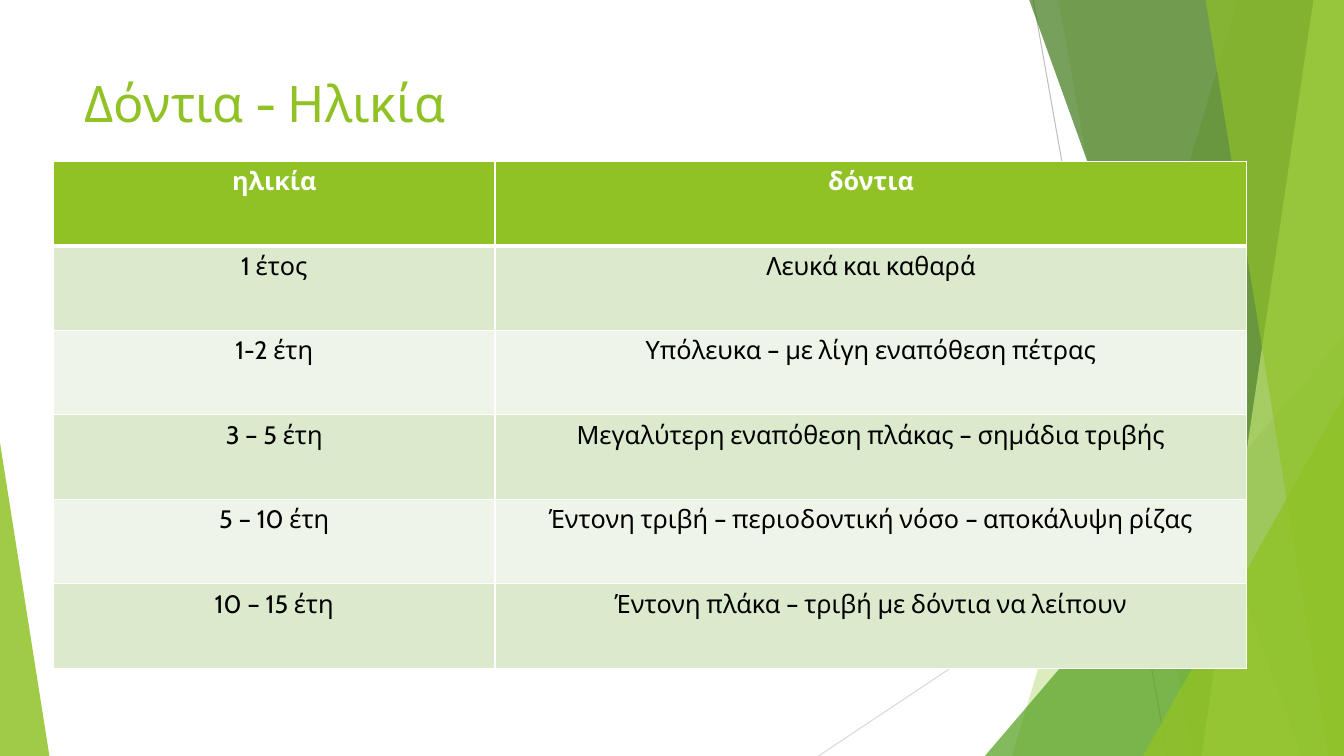
"""Build a slide with a table of teeth condition by age on a faceted green background."""
from lxml.etree import SubElement
from pptx import Presentation
from pptx.dml.color import RGBColor
from pptx.enum.shapes import MSO_CONNECTOR as CONNECTOR, MSO_SHAPE as SHAPE
from pptx.enum.text import MSO_ANCHOR as ANCHOR, PP_ALIGN as ALIGN
from pptx.oxml.ns import qn
from pptx.util import Inches, Pt

WIDTH, HEIGHT = Inches(13.333), Inches(7.5)
FONT = "Cabin"
GREEN, DARK_GREEN, MID_GREEN, LIME = "90C226", "3F7819", "54A021", "C0E474"
BANDS = ("EEF4E8", "DBE9CD")
COLUMN_SHARES = (32.85, 55.95)
ROW_SHARE = 11.18
ROWS = [
    ("ηλικία", "δόντια"),
    ("1 έτος", "Λευκά και καθαρά"),
    ("1-2 έτη", "Υπόλευκα – με λίγη εναπόθεση πέτρας"),
    ("3 – 5 έτη", "Μεγαλύτερη εναπόθεση πλάκας – σημάδια τριβής"),
    ("5 – 10 έτη", "Έντονη τριβή – περιοδοντική νόσο – αποκάλυψη ρίζας"),
    ("10 – 15 έτη", "Έντονη πλάκα – τριβή με δόντια να λείπουν"),
]


def across(share):
    """Return a percentage of the slide's width."""
    return round(WIDTH * share / 100)


def down(share):
    """Return a percentage of the slide's height."""
    return round(HEIGHT * share / 100)


def color(value):
    """Turn a hex string into a colour."""
    return RGBColor.from_string(value)


def write(frame, text, size=18, fill="000000", bold=False, align=ALIGN.LEFT):
    """Put one formatted paragraph into a text frame."""
    paragraph = frame.paragraphs[0]
    paragraph.alignment = align
    run = paragraph.add_run()
    run.text = text
    run.font.name, run.font.size, run.font.bold = FONT, Pt(size), bold
    run.font.color.rgb = color(fill)


def paint(shape, fill, opacity):
    """Give a shape a translucent fill without outline or shadow."""
    shape.shadow.inherit = False
    shape.line.fill.background()
    shape.fill.solid()
    shape.fill.fore_color.rgb = color(fill)
    tint = shape.fill._xPr.find(".//" + qn("a:srgbClr"))
    SubElement(tint, qn("a:alpha"), val=str(opacity * 1000))


def add_ray(slide, start, end, stroke):
    """Draw a thin background line."""
    line = slide.shapes.add_connector(
        CONNECTOR.STRAIGHT, across(start[0]), down(start[1]), across(end[0]), down(end[1]))
    line.line.color.rgb = color(stroke)
    line.line.width = Pt(0.75)
    SubElement(line._element.spPr, qn("a:effectLst"))


def add_facet(slide, top, bottom, fill, opacity):
    """Fill from a slanted left edge to the slide's right edge."""
    corners = [(across(x), down(y)) for x, y in ((top, 0), (100, 0), (100, 100), (bottom, 100))]
    builder = slide.shapes.build_freeform(*corners[0], scale=1.0)
    builder.add_line_segments(corners[1:], close=True)
    paint(builder.convert_to_shape(), fill, opacity)


def add_corner(slide, left, top, width, apex, fill, opacity):
    """Draw a right triangle standing on the slide's bottom edge."""
    shape = slide.shapes.add_shape(
        SHAPE.ISOSCELES_TRIANGLE, across(left), down(top), across(width), down(100 - top))
    shape.adjustments[0] = apex
    paint(shape, fill, opacity)


def add_background(slide):
    """Draw the rays and facets from back to front."""
    add_ray(slide, (76.88, 0), (86.85, 100), "BFBFBF")
    add_ray(slide, (100, 53.73), (60.9, 100), "D9D9D9")
    add_facet(slide, 92.1, 75.3, GREEN, 30)
    add_facet(slide, 78.75, 88.73, GREEN, 20)
    add_corner(slide, 73.28, 44.4, 26.72, 1, MID_GREEN, 72)
    add_facet(slide, 76.58, 96.83, DARK_GREEN, 70)
    add_facet(slide, 97.73, 89.4, LIME, 70)
    add_facet(slide, 89.7, 98.85, GREEN, 65)
    add_corner(slide, 85.05, 52.4, 14.95, 1, GREEN, 80)
    add_corner(slide, 0, 58.53, 3.68, 0, GREEN, 85)


def add_title(slide, text):
    """Place and format the title placeholder."""
    title = slide.shapes.title
    title.left, title.top = across(5.55), down(8.93)
    title.width, title.height = across(70.5), down(19.2)
    title.text_frame.word_wrap = True
    title.text_frame.vertical_anchor = ANCHOR.TOP
    write(title.text_frame, text, size=36, fill=GREEN)


def add_borders(cell, top, bottom):
    """Draw white borders, with the top and bottom widths in points."""
    properties = cell._tc.get_or_add_tcPr()
    for side, width in (("L", 1), ("R", 1), ("T", top), ("B", bottom)):
        border = SubElement(properties, qn("a:ln" + side), w=str(Pt(width)))
        SubElement(SubElement(border, qn("a:solidFill")), qn("a:srgbClr"), val="FFFFFF")


def add_age_table(slide):
    """Add the table with a green header and alternating rows."""
    table = slide.shapes.add_table(
        len(ROWS), len(COLUMN_SHARES), across(3.98), down(21.33),
        across(sum(COLUMN_SHARES)), down(ROW_SHARE * len(ROWS))).table
    for column, share in zip(table.columns, COLUMN_SHARES):
        column.width = across(share)
    for index, texts in enumerate(ROWS):
        header = index == 0
        table.rows[index].height = down(ROW_SHARE)
        for cell, text in zip(table.rows[index].cells, texts):
            add_borders(cell, top=3 if index == 1 else 1, bottom=3 if header else 1)
            cell.fill.solid()
            cell.fill.fore_color.rgb = color(GREEN if header else BANDS[index % 2])
            write(cell.text_frame, text, fill="FFFFFF" if header else "000000",
                  bold=header, align=ALIGN.CENTER)


def main():
    """Build and save the slide."""
    presentation = Presentation()
    presentation.slide_width, presentation.slide_height = WIDTH, HEIGHT
    slide = presentation.slides.add_slide(presentation.slide_layouts[5])
    add_background(slide)
    add_title(slide, "Δόντια - Ηλικία")
    add_age_table(slide)
    presentation.save("out.pptx")


if __name__ == "__main__":
    main()
